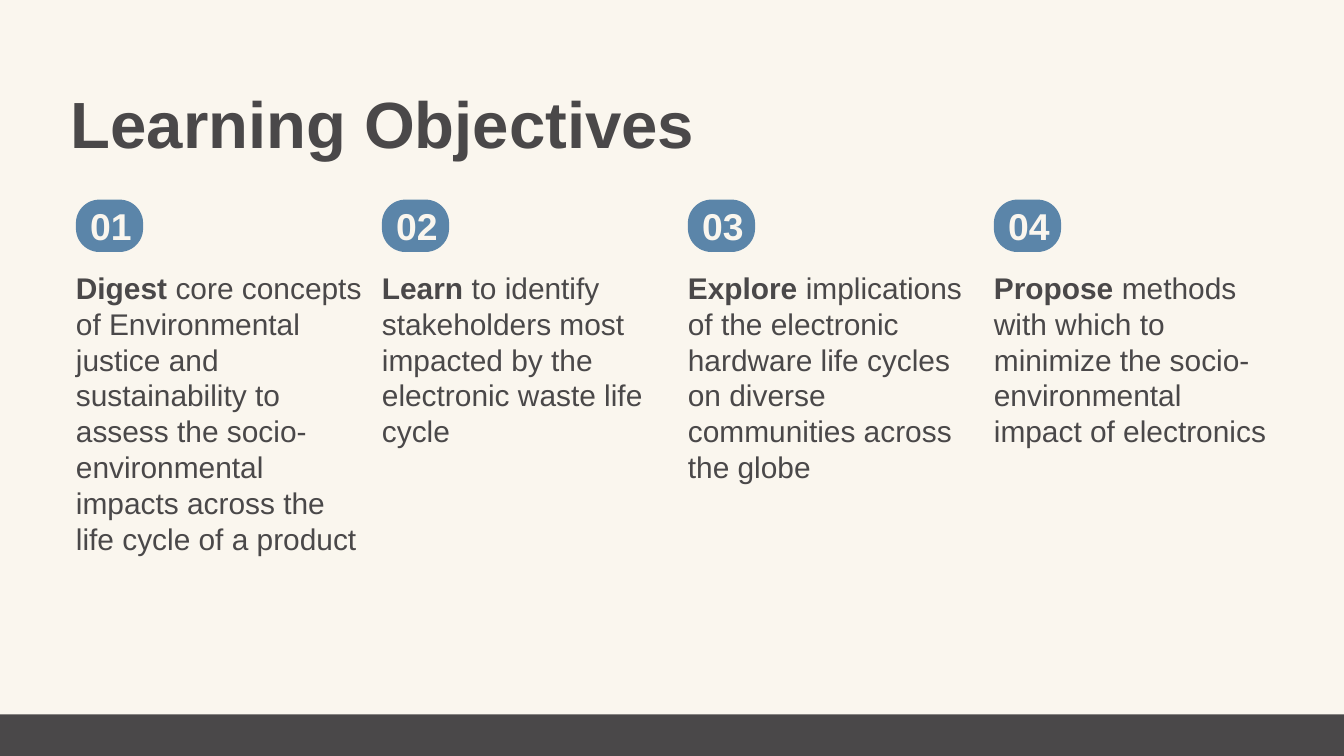
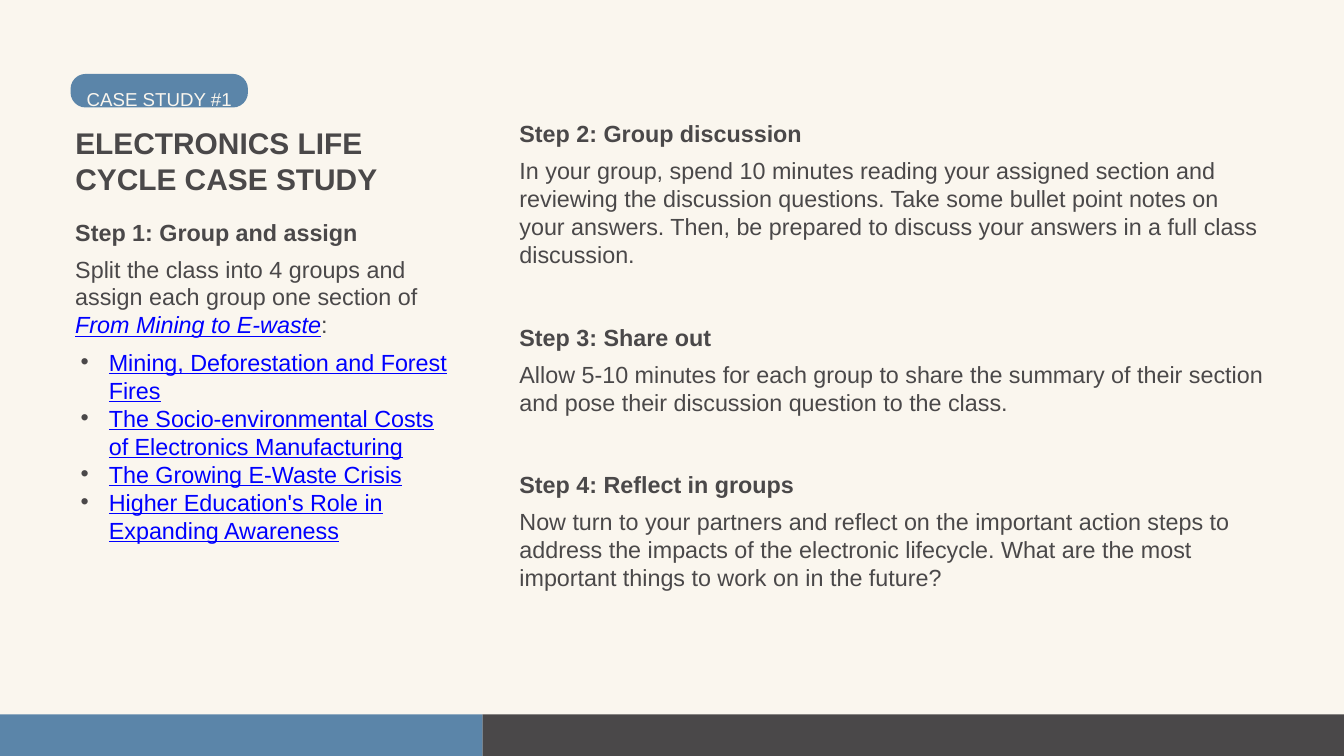
"""Build the learning objectives and electronics case study slides."""
from lxml import etree
from pptx import Presentation
from pptx.dml.color import RGBColor
from pptx.enum.shapes import MSO_SHAPE
from pptx.enum.text import MSO_ANCHOR, MSO_AUTO_SIZE, PP_ALIGN
from pptx.oxml.ns import qn
from pptx.util import Inches, Pt

RECTANGLE, ROUNDED = MSO_SHAPE.RECTANGLE, MSO_SHAPE.ROUNDED_RECTANGLE
TOP, LEFT, NO_AUTOFIT = MSO_ANCHOR.TOP, PP_ALIGN.LEFT, MSO_AUTO_SIZE.NONE

WIDTH, HEIGHT = 20, 11.25
BAND_HEIGHT = 0.62
FONT = "Arial"
CREAM, CHARCOAL, BLUE, LINK_BLUE = "FAF6EE", "4A4849", "5B85A9", "0000FF"

BOLD = {"bold": True}
LINK = {"color": LINK_BLUE, "underline": True}
ITALIC_LINK = {**LINK, "italic": True}

OBJECTIVES = [
    ("Digest", " core concepts of Environmental justice and sustainability to "
     "assess the socio-environmental impacts across the life cycle of a product", 4.34, 8),
    ("Learn", " to identify stakeholders most impacted by the electronic waste "
     "life cycle", 4.13, 5),
    ("Explore", " implications of the electronic hardware life cycles on diverse "
     "communities across the globe", 4.13, 6),
    ("Propose", " methods with which to minimize the socio-environmental impact "
     "of electronics", 4.13, 5),
]
FIRST_COLUMN, LAST_COLUMN = 1.13, 14.79
BADGE_TOP, OBJECTIVE_TOP = 2.97, 4.01

STEP_ONE = "Step 1: Group and assign"
ASSIGNMENT = [
    ("Split the class into 4 groups and assign each group one section of ", {}),
    ("From Mining to E-waste", ITALIC_LINK),
    (":", {}),
]
SECTIONS = [
    "Mining, Deforestation and Forest Fires",
    "The Socio-environmental Costs of Electronics Manufacturing",
    "The Growing E-Waste Crisis",
    "Higher Education's Role in Expanding Awareness",
]
LATER_STEPS = [
    ("Step 2: Group discussion",
     "In your group, spend 10 minutes reading your assigned section and reviewing "
     "the discussion questions. Take some bullet point notes on your answers. Then, "
     "be prepared to discuss your answers in a full class discussion.", 4),
    ("Step 3: Share out",
     "Allow 5-10 minutes for each group to share the summary of their section and "
     "pose their discussion question to the class.", 2),
    ("Step 4: Reflect in groups",
     "Now turn to your partners and reflect on the important action steps to address "
     "the impacts of the electronic lifecycle. What are the most important things to "
     "work on in the future?", 3),
]
STEP_SIZE, STEP_LINE = 25, 0.42
HEADING_TO_BODY, STEP_GAP = 0.55, 0.8
LEFT_COLUMN, RIGHT_COLUMN, BAND_SPLIT = 1.12, 7.73, 7.18


def rgb(color):
    return RGBColor.from_string(color)


def place(shape, box):
    for name, length in zip(("left", "top", "width", "height"), box):
        setattr(shape, name, Inches(length))


def write_runs(paragraph, runs, size, color=CHARCOAL, line_spacing=None):
    paragraph.alignment = LEFT
    paragraph.line_spacing = line_spacing or Pt(size * 1.2)
    for text, style in runs:
        run = paragraph.add_run()
        run.text = text
        style = {"color": color, "bold": False, **style}
        run.font.color.rgb = rgb(style.pop("color"))
        for name, value in {"name": FONT, "size": Pt(size), **style}.items():
            setattr(run.font, name, value)


def fill_text(shape, box, runs, size, **options):
    place(shape, box)
    frame = shape.text_frame
    settings = {"word_wrap": True, "auto_size": NO_AUTOFIT, "vertical_anchor": TOP,
                "margin_left": 0, "margin_top": 0, "margin_right": 0, "margin_bottom": 0}
    for name, value in settings.items():
        setattr(frame, name, value)
    write_runs(frame.paragraphs[0], runs, size, **options)
    return frame


def add_text(slide, box, runs, size, **options):
    shape = slide.shapes.add_textbox(0, 0, 0, 0)
    return fill_text(shape, box, runs, size, **options)


def add_block(slide, kind, box, color):
    shape = slide.shapes.add_shape(kind, *map(Inches, box))
    shape.shadow.inherit = False
    shape.fill.solid()
    shape.fill.fore_color.rgb = rgb(color)
    shape.line.fill.background()
    return shape


def add_band(slide, left, right, color):
    box = (left, HEIGHT - BAND_HEIGHT, right - left, BAND_HEIGHT)
    add_block(slide, RECTANGLE, box, color)


def add_pill(slide, box, label_box, label, size, **options):
    pill = add_block(slide, ROUNDED, box, BLUE)
    pill.adjustments[0] = 0.45
    add_text(slide, label_box, label, size, color=CREAM, **options)


def add_bullet(paragraph):
    paragraph.level = 1
    properties = paragraph._p.get_or_add_pPr()
    properties.set("marL", str(Inches(0.5)))
    properties.set("indent", str(Inches(-0.42)))
    bullet_color = etree.SubElement(properties, qn("a:buClr"))
    etree.SubElement(bullet_color, qn("a:srgbClr"), val=CHARCOAL)
    etree.SubElement(properties, qn("a:buFont"), typeface=FONT)
    etree.SubElement(properties, qn("a:buChar"), char="•")


def add_step(slide, left, top, width, heading, body, lines):
    add_text(slide, (left, top, width, STEP_LINE), [(heading, BOLD)], STEP_SIZE)
    box = (left, top + HEADING_TO_BODY, width, lines * STEP_LINE)
    return add_text(slide, box, body, STEP_SIZE)


def add_titled_slide(presentation, title, box, size):
    slide = presentation.slides.add_slide(presentation.slide_layouts[5])
    fill_text(slide.shapes.title, box, [(title, BOLD)], size)
    return slide


def build_objectives(presentation):
    slide = add_titled_slide(presentation, "Learning Objectives",
                             (1.05, 1.24, 17.82, 1.18), 70)
    add_band(slide, 0, WIDTH, CHARCOAL)
    pitch = (LAST_COLUMN - FIRST_COLUMN) / (len(OBJECTIVES) - 1)
    for index, (verb, rest, width, lines) in enumerate(OBJECTIVES):
        left = FIRST_COLUMN + index * pitch
        add_text(slide, (left, OBJECTIVE_TOP, width, lines * 0.54),
                 [(verb, BOLD), (rest, {})], 32)
        add_pill(slide, (left, BADGE_TOP, 1, 0.78),
                 (left + 0.21, BADGE_TOP + 0.05, 3.39, 0.67),
                 [(f"{index + 1:02}", BOLD)], 40)


def build_case_study(presentation):
    slide = add_titled_slide(presentation, "ELECTRONICS LIFE CYCLE CASE STUDY",
                             (LEFT_COLUMN, 1.85, 4.65, 1.08), 32)
    add_band(slide, BAND_SPLIT, WIDTH, CHARCOAL)
    add_band(slide, 0, BAND_SPLIT, BLUE)
    frame = add_step(slide, LEFT_COLUMN, 3.24, 5.66, STEP_ONE, ASSIGNMENT, 10)
    for index, section in enumerate(SECTIONS):
        paragraph = frame.add_paragraph()
        paragraph.line_spacing = Pt(STEP_SIZE * 1.2)
        paragraph.space_before = Pt(0 if index else 10)
        add_bullet(paragraph)
        write_runs(paragraph, [(section, LINK)], STEP_SIZE)
    top = 1.78
    for heading, body, lines in LATER_STEPS:
        add_step(slide, RIGHT_COLUMN, top, 11.15, heading, [(body, {})], lines)
        top += HEADING_TO_BODY + lines * STEP_LINE + STEP_GAP
    add_pill(slide, (1.05, 1.1, 2.64, 0.5), (1.29, 1.18, 9.33, 0.34),
             [("CASE STUDY #1", {})], 20, line_spacing=1.4)


def main():
    presentation = Presentation()
    presentation.slide_width = Inches(WIDTH)
    presentation.slide_height = Inches(HEIGHT)
    background = presentation.slide_master.background.fill
    background.solid()
    background.fore_color.rgb = rgb(CREAM)
    build_objectives(presentation)
    build_case_study(presentation)
    presentation.save("out.pptx")


if __name__ == "__main__":
    main()
